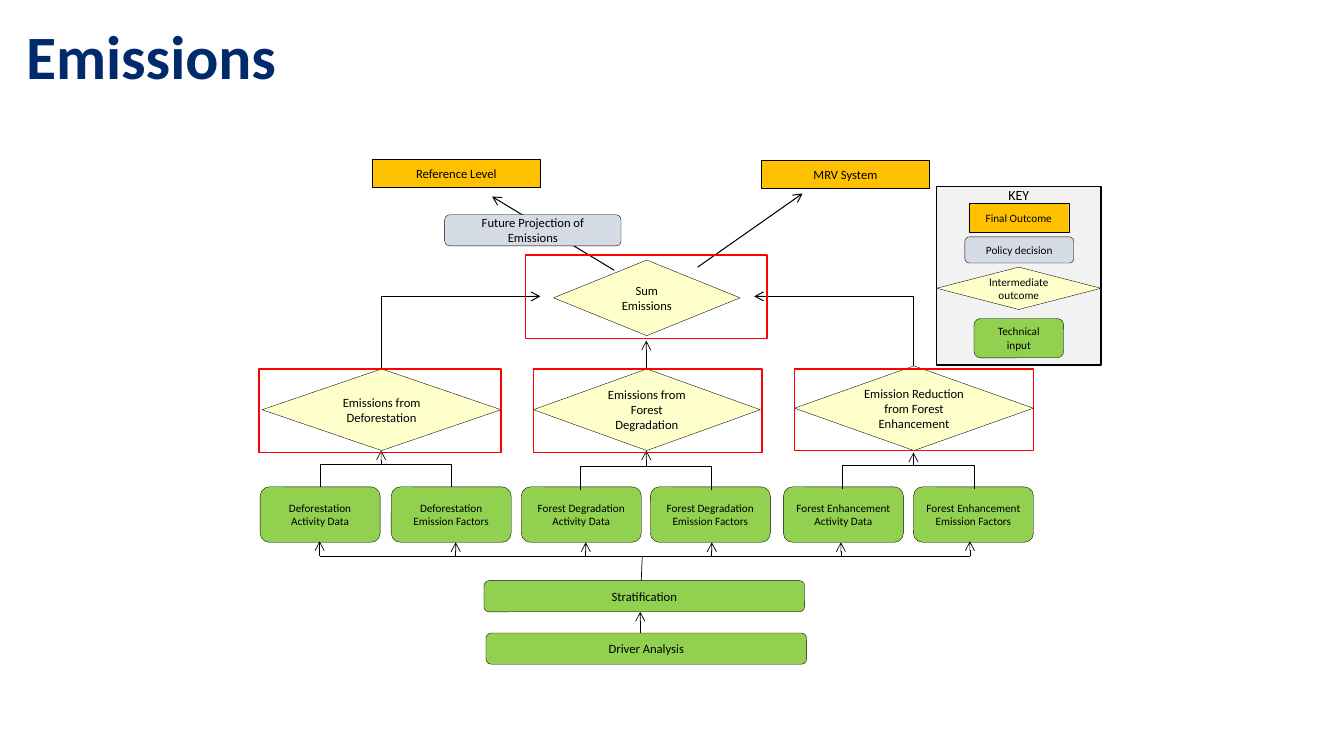
from lxml import etree
from pptx import Presentation
from pptx.dml.color import RGBColor
from pptx.enum.shapes import MSO_CONNECTOR, MSO_SHAPE
from pptx.enum.text import MSO_ANCHOR, PP_ALIGN
from pptx.oxml.ns import qn
from pptx.util import Pt

PX = 9144
RECT = MSO_SHAPE.RECTANGLE
ROUND = MSO_SHAPE.ROUNDED_RECTANGLE
GEM = MSO_SHAPE.FLOWCHART_DECISION
LINE = MSO_CONNECTOR.STRAIGHT
MID, TOP = MSO_ANCHOR.MIDDLE, MSO_ANCHOR.TOP
MIDDLE, LEFT = PP_ALIGN.CENTER, PP_ALIGN.LEFT

BLACK = RGBColor(0x00, 0x00, 0x00)
NAVY = RGBColor(0x00, 0x2A, 0x6C)
GOLD = RGBColor(0xFF, 0xC0, 0x00)
CREAM = RGBColor(0xFF, 0xFF, 0xCC)
STEEL = RGBColor(0xD6, 0xDC, 0xE5)
GREEN = RGBColor(0x92, 0xD0, 0x50)
PALE = RGBColor(0xF2, 0xF2, 0xF2)
RED = RGBColor(0xFF, 0x00, 0x00)

KINDS = {
    "final": (RECT, GOLD),
    "policy": (ROUND, STEEL),
    "outcome": (GEM, CREAM),
    "input": (ROUND, GREEN),
}
TITLE = "Emissions"
FLOW = [
    ("outcome", "Sum Emissions", (549, 258, 185, 75), 10),
    ("final", "Reference Level", (369, 158, 167, 28), 10),
    ("final", "MRV System", (755, 159, 167, 28), 10),
    ("outcome", "Emissions from Deforestation", (260, 366, 237, 81), 10),
    ("outcome", "Emissions from Forest Degradation", (529, 366, 225, 81), 10),
    ("outcome", "Emission Reduction from Forest Enhancement", (788, 363, 237, 84), 0),
    ("policy", "Future Projection of Emissions", (441, 213, 175, 31), 10),
    ("input", "Stratification", (480, 576, 318, 31), 10),
    ("input", "Driver Analysis", (482, 628, 318, 31), 10),
]
DATA = [
    ("Deforestation", 258, 388),
    ("Forest Degradation", 517, 645),
    ("Forest Enhancement", 777, 906),
]
SORTS = ["Activity Data", "Emission Factors"]
KEY = [
    ("final", "Final Outcome", (961, 202, 99, 28), 10),
    ("policy", "Policy decision", (957, 235, 108, 26), 10),
    ("outcome", "Intermediate outcome", (929, 265, 163, 42), 0),
    ("input", "Technical input", (966, 316, 89, 39), 10),
]
FRAMES = [(529, 366, 227, 83), (257, 366, 240, 83),
          (788, 366, 237, 81), (521, 253, 240, 83)]
RISES = [((692, 265), (796, 192)), ((609, 268), (488, 195))]
BENDS = [[(906, 363), (906, 294), (748, 294)],
         [(378, 366), (378, 294), (536, 294)]]
FORKS = [(318, 483, 461, 378, 447), (576, 486, 463, 641, 447),
         (836, 485, 462, 906, 449)]
SPAN = 130
TRUNK = 552
TIPS = [(317, 537), (452, 538), (581, 538), (706, 538), (834, 538), (962, 537)]

deck = Presentation()
deck.slide_width, deck.slide_height = 1333 * PX, 750 * PX
slide = deck.slides.add_slide(deck.slide_layouts[6])
shapes = slide.shapes


def assign(part, form):
    for name, value in form.items():
        setattr(part, name, value)


def write(shape, text, size, color=BLACK, bold=False, align=MIDDLE,
          anchor=MID, side=10, top=5):
    frame = shape.text_frame
    assign(frame, dict(word_wrap=True, vertical_anchor=anchor,
                       margin_left=side * PX, margin_right=side * PX,
                       margin_top=top * PX, margin_bottom=5 * PX))
    para = frame.paragraphs[0]
    para.alignment = align
    run = para.add_run()
    run.text = text
    assign(run.font, dict(name="Calibri", size=Pt(size), bold=bold))
    run.font.color.rgb = color
    return para


def box(kind, place, fill, color=BLACK, width=0.25):
    shape = shapes.add_shape(kind, *[n * PX for n in place])
    shape.shadow.inherit = False
    if fill is None:
        shape.fill.background()
    else:
        shape.fill.solid()
        shape.fill.fore_color.rgb = fill
    shape.line.color.rgb = color
    shape.line.width = Pt(width)
    return shape


def node(kind, text, place, side, size):
    write(box(KINDS[kind][0], place, KINDS[kind][1]), text, size, side=side)


def ink(shape, width, arrow):
    shape.line.color.rgb = BLACK
    shape.line.width = Pt(width)
    if arrow:
        stroke = shape.line._get_or_add_ln()
        etree.SubElement(stroke, qn("a:tailEnd")).set("type", "arrow")


def link(start, end, width=0.5, arrow=True):
    line = shapes.add_connector(LINE, *[n * PX for n in start + end])
    ink(line, width, arrow)
    etree.SubElement(line._element.spPr, qn("a:effectLst"))


def bend(points, width=0.5, arrow=False):
    draft = shapes.build_freeform(*points[0], scale=PX)
    draft.add_line_segments(points[1:], close=False)
    shape = draft.convert_to_shape()
    shape.shadow.inherit = False
    shape.fill.background()
    ink(shape, width, arrow)


head = shapes.add_textbox(*[n * PX for n in (16, 0, 1299, 118)])
write(head, TITLE, 44, NAVY, True, LEFT).line_spacing = 0.9

for start, end in RISES:
    link(start, end, 0.75)
for points in BENDS:
    bend(points, 0.75, True)
for item in FLOW:
    node(*item, 9)
for topic, *lefts in DATA:
    for sort, left in zip(SORTS, lefts):
        node("input", f"{topic} {sort}", (left, 483, 119, 55), 10, 8)

for left, base, bar, stem, tip in FORKS:
    right = left + SPAN
    bend([(left, base), (left, bar), (right, bar), (right, base)])
    link((stem, bar), (stem, tip))
for x, tip in TIPS:
    link((x, TRUNK), (x, tip))
link((TIPS[0][0], TRUNK), (TIPS[-1][0], TRUNK), arrow=False)
link((641, 366), (641, 338))
link((635, 628), (635, 607))
link((636, 576), (637, TRUNK), arrow=False)

panel = box(RECT, (929, 185, 163, 177), PALE, width=1)
write(panel, "KEY", 10, anchor=TOP, top=0)
for item in KEY:
    node(*item, 8)
for place in FRAMES:
    box(RECT, place, None, RED, 1)

deck.save("out.pptx")
